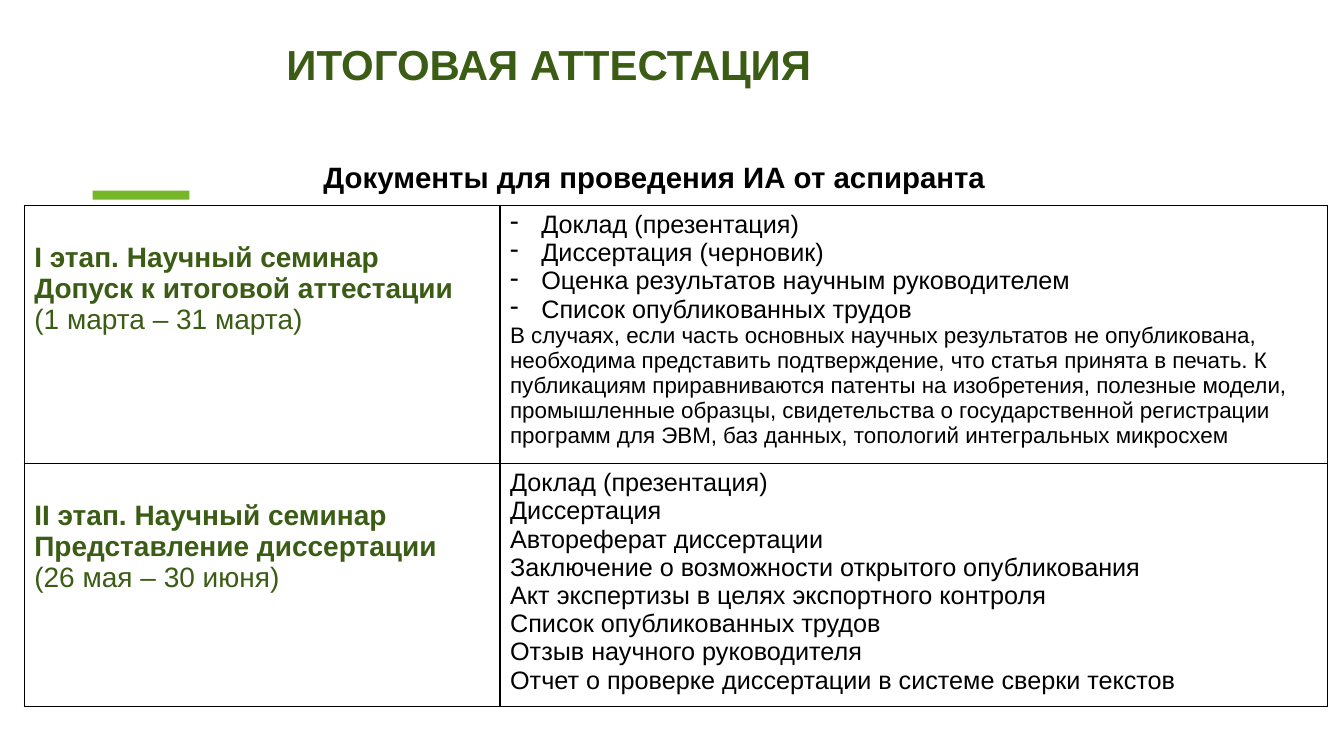
"""Builds the slide on the documents for the final attestation."""
from pptx import Presentation
from pptx.dml.color import RGBColor
from pptx.enum.shapes import MSO_SHAPE as Shape
from pptx.enum.text import MSO_ANCHOR as Anchor, PP_ALIGN as Align
from pptx.oxml import parse_xml
from pptx.oxml.ns import nsdecls
from pptx.util import Inches, Pt

GREEN = RGBColor(0x3B, 0x5C, 0x14)
LIME = RGBColor(0x76, 0xB7, 0x29)
BLACK = RGBColor(0, 0, 0)


def put(frame, text, size=18, color=BLACK, bold=False, align=Align.LEFT,
        space=1.0, dash=False):
    para = frame.add_paragraph() if frame.text else frame.paragraphs[0]
    para.alignment = align
    para.line_spacing = space
    if dash:
        props = para._p.get_or_add_pPr()
        props.set("marL", str(Inches(0.31)))
        props.set("indent", str(-Inches(0.31)))
        props.append(parse_xml(f'<a:buChar {nsdecls("a")} char="-"/>'))
    run = para.add_run()
    run.text = text
    font = run.font
    font.name = "Arial"
    font.size = Pt(size)
    font.bold = bold
    font.color.rgb = color


deck = Presentation()
deck.slide_width = Inches(13.33)
deck.slide_height = Inches(7.5)
slide = deck.slides.add_slide(deck.slide_layouts[5])

bar = slide.shapes.add_shape(
    Shape.RECTANGLE, Inches(0.92), Inches(1.89), Inches(0.96), Inches(0.09))
bar.shadow.inherit = False
bar.fill.solid()
bar.fill.fore_color.rgb = LIME
bar.line.fill.background()

title = slide.shapes.title
title.left, title.top = Inches(2.74), Inches(0.21)
title.width, title.height = Inches(5.48), Inches(0.9)
title.text_frame.vertical_anchor = Anchor.MIDDLE
put(title.text_frame, "ИТОГОВАЯ АТТЕСТАЦИЯ", size=30, color=GREEN, bold=True,
    space=0.9)

stages = [
    (["I этап. Научный семинар", "Допуск к итоговой аттестации"],
     "(1 марта – 31 марта)"),
    (["II этап. Научный семинар Представление диссертации"],
     "(26 мая – 30 июня)"),
]
papers = [
    ["Доклад (презентация)", "Диссертация (черновик)",
     "Оценка результатов научным руководителем",
     "Список опубликованных трудов"],
    ["Доклад (презентация)", "Диссертация", "Автореферат диссертации",
     "Заключение о возможности открытого опубликования",
     "Акт экспертизы в целях экспортного контроля",
     "Список опубликованных трудов", "Отзыв научного руководителя",
     "Отчет о проверке диссертации в системе сверки текстов"],
]
note = (
    "В случаях, если часть основных научных результатов не опубликована, "
    "необходима представить подтверждение, что статья принята в печать. "
    "К публикациям приравниваются патенты на изобретения, полезные модели, "
    "промышленные образцы, свидетельства о государственной регистрации "
    "программ для ЭВМ, баз данных, топологий интегральных микросхем")

table = slide.shapes.add_table(
    2, 2, Inches(0.24), Inches(2.04), Inches(12.93), Inches(4.97)).table
table.first_row = False
table.horz_banding = False
for col, width in zip(table.columns, (4.72, 8.21)):
    col.width = Inches(width)
for row, height in zip(table.rows, (2.56, 2.41)):
    row.height = Inches(height)

for cell in table.iter_cells():
    cell.fill.background()
    for spot, side in enumerate("LRTB"):
        cell._tc.get_or_add_tcPr().insert(spot, parse_xml(
            f'<a:ln{side} {nsdecls("a")} w="{Pt(1)}"><a:solidFill>'
            f'<a:srgbClr val="{BLACK}"/></a:solidFill></a:ln{side}>'))

for num, ((heads, dates), items) in enumerate(zip(stages, papers)):
    left, right = table.cell(num, 0), table.cell(num, 1)
    left.margin_top = Inches(0.36)
    for head in heads:
        put(left.text_frame, head, size=20, color=GREEN, bold=True)
    put(left.text_frame, dates, size=20, color=GREEN)
    for item in items:
        put(right.text_frame, item, dash=num == 0)
put(table.cell(0, 1).text_frame, note, size=16)

label = slide.shapes.add_textbox(
    Inches(1.14), Inches(1.47), Inches(10.7), Inches(0.57)).text_frame
label.word_wrap = True
label.vertical_anchor = Anchor.MIDDLE
put(label, "Документы для проведения ИА от аспиранта", size=21, bold=True,
    align=Align.CENTER)

deck.save("out.pptx")
